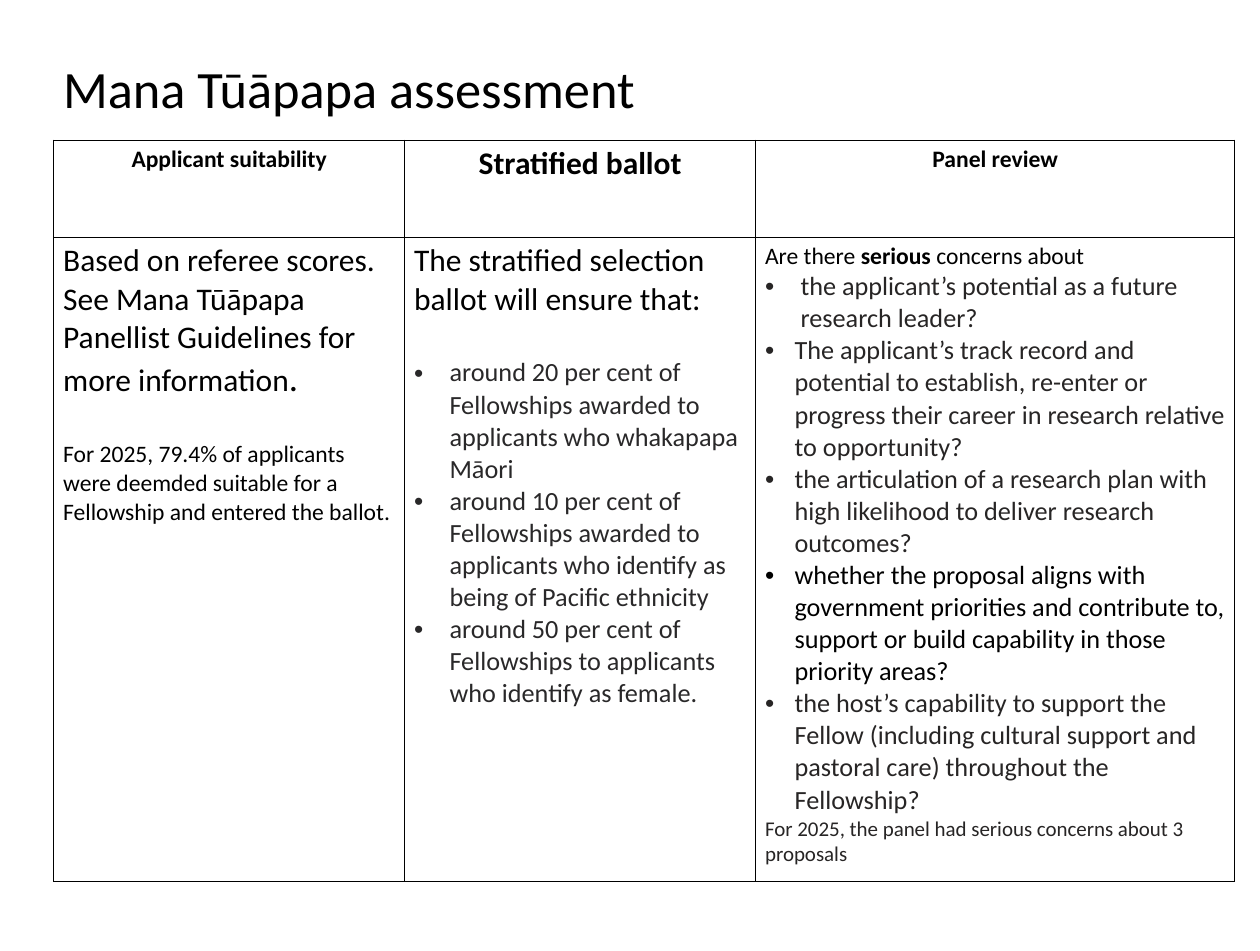
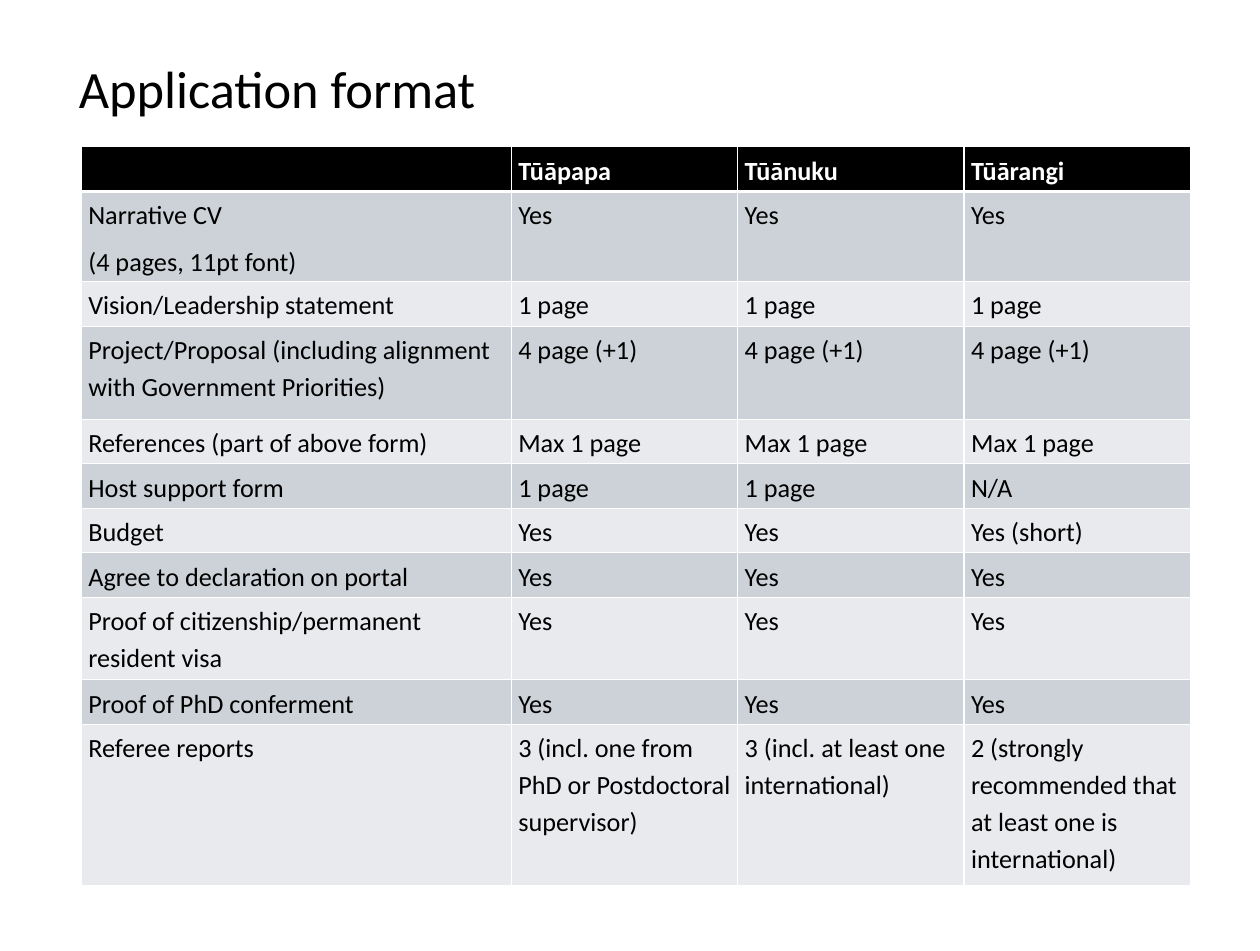
import pptx
import pptx.util
import pptx.dml.color
import pptx.enum.text
import pptx.oxml
import pptx.oxml.ns

Pt = pptx.util.Pt
RGBColor = pptx.dml.color.RGBColor
PP_ALIGN = pptx.enum.text.PP_ALIGN

FONT = "Calibri"
BLACK = RGBColor(0x00, 0x00, 0x00)
WHITE = RGBColor(0xFF, 0xFF, 0xFF)
BALLOT_GREY = RGBColor(0x29, 0x28, 0x29)
PANEL_GREY = RGBColor(0x27, 0x25, 0x25)
DARK_BAND = RGBColor(0xCC, 0xD2, 0xD8)
LIGHT_BAND = RGBColor(0xE8, 0xEA, 0xED)

SLIDE_SIZE = (961.2, 725.8)
TITLE_SIZE = (829, 140.4)
BLANK_LINE = 29.3  # height of one 24 pt line


# Shared text and table helpers

def para(*runs, size=20, color=BLACK, bold=False, align=None, hang=0, after=0, spacing=None):
    """Describe a paragraph; a run is text, or (text, {font attribute: value})."""
    return dict(runs=runs, size=size, color=color, bold=bold, align=align,
                hang=hang, after=after, spacing=spacing)


def add_bullet(paragraph, hang):
    properties = paragraph._p.get_or_add_pPr()
    properties.set("marL", str(Pt(hang)))
    properties.set("indent", str(-Pt(hang)))
    for tag, key, value in (("buFont", "typeface", "Arial"), ("buChar", "char", "•")):
        properties.append(pptx.oxml.parse_xml(
            f'<a:{tag} {pptx.oxml.ns.nsdecls("a")} {key}="{value}"/>'))


def write(frame, paragraphs):
    for index, item in enumerate(paragraphs):
        paragraph = frame.add_paragraph() if index else frame.paragraphs[0]
        if item["hang"]:
            add_bullet(paragraph, item["hang"])
        paragraph.alignment = item["align"]
        paragraph.line_spacing = item["spacing"]
        paragraph.space_before = Pt(0)
        paragraph.space_after = Pt(item["after"])
        font = paragraph.font
        font.name, font.size, font.bold = FONT, Pt(item["size"]), item["bold"]
        font.color.rgb = item["color"]
        for part in item["runs"]:
            text, changes = (part, {}) if isinstance(part, str) else part
            run = paragraph.add_run()
            run.text = text
            for attribute, value in changes.items():
                setattr(run.font, attribute, value)


def set_borders(cell, color, left=1, right=1, top=1, bottom=1):
    properties = cell._tc.get_or_add_tcPr()
    for side, width in zip("LRTB", (left, right, top, bottom)):
        properties.append(pptx.oxml.parse_xml(
            f'<a:ln{side} {pptx.oxml.ns.nsdecls("a")} w="{Pt(width)}">'
            f'<a:solidFill><a:srgbClr val="{color}"/></a:solidFill></a:ln{side}>'))


def add_grid(slide, left, top, widths, heights):
    table = slide.shapes.add_table(len(heights), len(widths), Pt(left), Pt(top),
                                   Pt(sum(widths)), Pt(sum(heights))).table
    table.first_row = table.horz_banding = False
    for column, width in zip(table.columns, widths):
        column.width = Pt(width)
    for row, height in zip(table.rows, heights):
        row.height = Pt(height)
    return table


def add_title(slide, left, text):
    title = slide.shapes.add_textbox(Pt(left), Pt(0), *map(Pt, TITLE_SIZE))
    frame = title.text_frame
    frame.word_wrap = True
    frame.vertical_anchor = pptx.enum.text.MSO_ANCHOR.MIDDLE
    write(frame, [para(text, size=40, spacing=0.9)])


# Assessment content

def heading(text, size):
    return [para(text, size=size, bold=True, align=PP_ALIGN.CENTER)]


ASSESSMENT_HEADINGS = [heading("Applicant suitability", 18),
                       heading("Stratified ballot", 24),
                       heading("Panel review", 18)]

SUITABILITY = [
    para("Based on referee scores. See Mana Tūāpapa Panellist Guidelines for more information",
         (".", {"size": Pt(28)}), size=24, after=BLANK_LINE),
    para("For 2025, 79.4% of applicants were deemded suitable for a Fellowship and "
         "entered the ballot.", size=18),
]

BALLOT = [para("The stratified selection ballot will ensure that:", size=24, after=BLANK_LINE)] + [
    para(text, color=BALLOT_GREY, hang=27) for text in (
        "around 20 per cent of Fellowships awarded to applicants who whakapapa Māori",
        "around 10 per cent of Fellowships awarded to applicants who identify as being of "
        "Pacific ethnicity",
        "around 50 per cent of Fellowships to applicants who identify as female.",
    )]

PANEL_CONCERNS = [
    ("the applicant’s potential as a future research leader?", PANEL_GREY, 27),
    ("The applicant’s track record and potential to establish, re-enter or progress their "
     "career in research relative to opportunity?", PANEL_GREY, 22.5),
    ("the articulation of a research plan with high likelihood to deliver research outcomes?",
     PANEL_GREY, 22.5),
    ("whether the proposal aligns with government priorities and contribute to, support or "
     "build capability in those priority areas?", BLACK, 22.5),
    ("the host’s capability to support the Fellow (including cultural support and pastoral "
     "care) throughout the Fellowship?", PANEL_GREY, 22.5),
]

PANEL = [
    para("Are there ", ("serious", {"bold": True}), " concerns about", size=18),
    *(para(text, color=color, hang=hang) for text, color, hang in PANEL_CONCERNS),
    para("For 2025, the panel had serious concerns about 3 proposals", size=16, color=PANEL_GREY),
]

# Application format content: row height, requirement, then one entry per fellowship

FORMAT_ROWS = [
    (34, "", "Tūāpapa", "Tūānuku", "Tūārangi"),
    (69, "Narrative CV\n(4 pages, 11pt font)", "Yes", "Yes", "Yes"),
    (34, "Vision/Leadership statement", "1 page", "1 page", "1 page"),
    (71, "Project/Proposal (including alignment with Government Priorities)",
     "4 page (+1)", "4 page (+1)", "4 page (+1)"),
    (34, "References (part of above form)", "Max 1 page", "Max 1 page", "Max 1 page"),
    (34, "Host support form", "1 page", "1 page", "N/A"),
    (34, "Budget", "Yes", "Yes", "Yes (short)"),
    (34, "Agree to declaration on portal", "Yes", "Yes", "Yes"),
    (63, "Proof of citizenship/permanent resident visa", "Yes", "Yes", "Yes"),
    (34, "Proof of PhD conferment", "Yes", "Yes", "Yes"),
    (123, "Referee reports", "3 (incl. one from PhD or Postdoctoral supervisor)",
     "3 (incl. at least one international)",
     "2 (strongly recommended that at least one is international)"),
]


# Tables

def add_assessment_table(slide, left, top):
    table = add_grid(slide, left, top, [267.75, 267.75, 365.5], [74, 492])
    for r, row in enumerate([ASSESSMENT_HEADINGS, [SUITABILITY, BALLOT, PANEL]]):
        for c, paragraphs in enumerate(row):
            cell = table.cell(r, c)
            set_borders(cell, BLACK)
            cell.fill.background()
            write(cell.text_frame, paragraphs)


def add_format_table(slide, left, top):
    table = add_grid(slide, left, top, [328] + [172.7] * 3, [row[0] for row in FORMAT_ROWS])
    for r, (_, *entries) in enumerate(FORMAT_ROWS):
        is_header = r == 0
        band = BLACK if is_header else DARK_BAND if r % 2 else LIGHT_BAND
        for c, entry in enumerate(entries):
            cell = table.cell(r, c)
            cell.margin_left = cell.margin_right = Pt(5.4)
            cell.margin_top = cell.margin_bottom = Pt(2.7)
            set_borders(cell, WHITE, top=3 if r == 1 else 1, bottom=3 if is_header else 1)
            cell.fill.solid()
            cell.fill.fore_color.rgb = band
            write(cell.text_frame, [
                para(line, color=WHITE if is_header else BLACK, bold=is_header,
                     after=8, spacing=1.15)
                for line in entry.split("\n")])


# Slides

def build_assessment(slide):
    add_title(slide, 41, "Mana Tūāpapa assessment")
    add_assessment_table(slide, 41, 107)


def build_format(slide):
    add_title(slide, 53, "Application format")
    add_format_table(slide, 62, 112)


def main():
    deck = pptx.Presentation()
    deck.slide_width, deck.slide_height = map(Pt, SLIDE_SIZE)
    for build in (build_assessment, build_format):
        build(deck.slides.add_slide(deck.slide_layouts[6]))
    deck.save("out.pptx")


if __name__ == "__main__":
    main()
